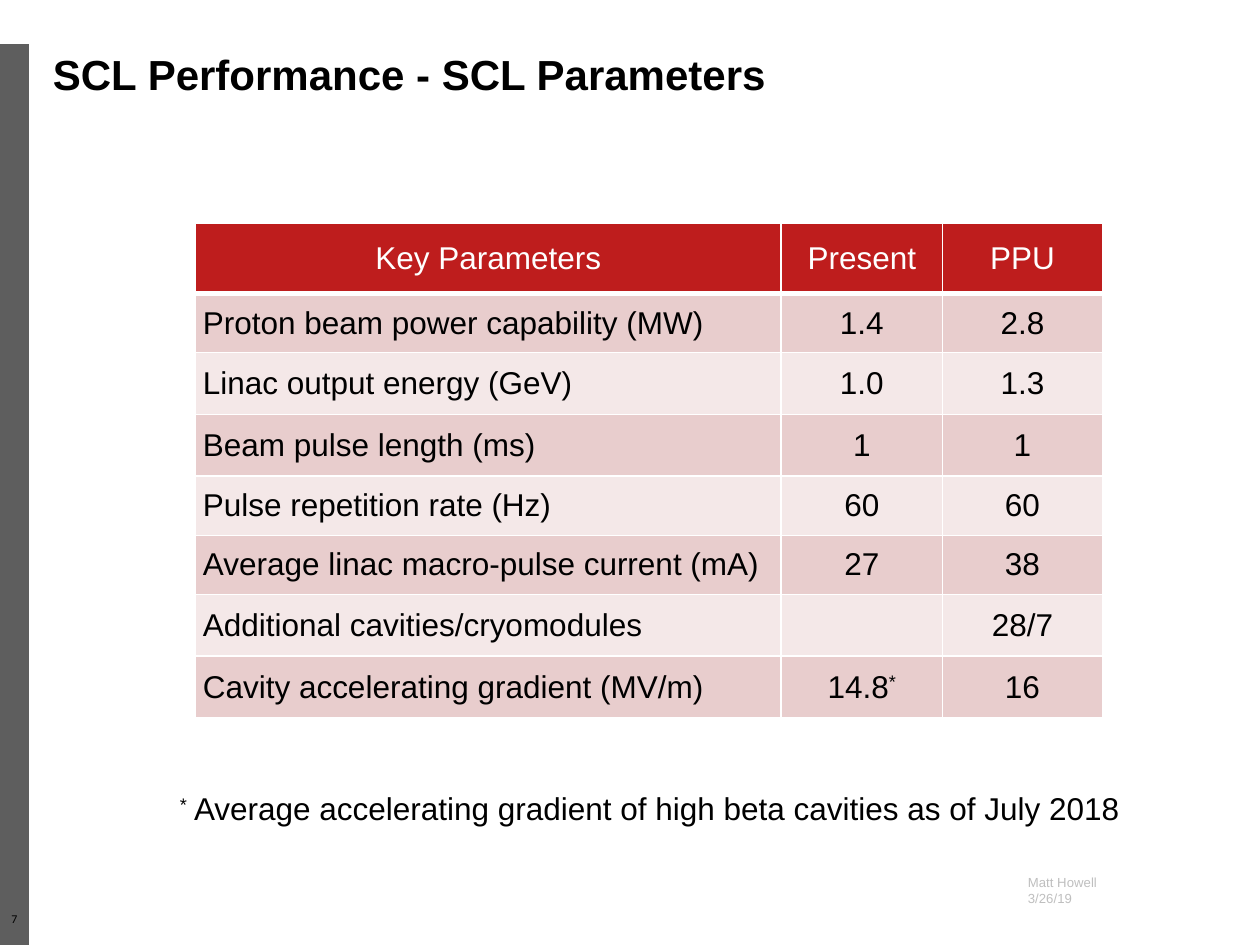
from dataclasses import dataclass

from lxml.etree import SubElement
from pptx import Presentation
from pptx.dml.color import RGBColor
from pptx.enum.shapes import MSO_SHAPE
from pptx.enum.text import MSO_ANCHOR as Anchor, MSO_AUTO_SIZE as AutoSize, PP_ALIGN as Align
from pptx.oxml.ns import qn
from pptx.util import Inches, Pt


@dataclass(frozen=True)
class Theme:
    font: str = "Arial"
    number_font: str = "Calibri"
    ink: str = "000000"
    paper: str = "FFFFFF"
    sidebar: str = "5E5E5E"
    credit: str = "BFBFBF"
    header: str = "BE1D1D"
    bands: tuple = ("E8CDCD", "F4E8E8")
    title_size: float = 24
    body_size: float = 18
    credit_size: float = 7.5
    number_size: float = 6.8
    border: float = 1
    header_border: float = 3


PARAMETERS = [
    ("Key Parameters", "Present", "PPU"),
    ("Proton beam power capability (MW)", "1.4", "2.8"),
    ("Linac output energy (GeV)", "1.0", "1.3"),
    ("Beam pulse length (ms)", "1", "1"),
    ("Pulse repetition rate (Hz)", "60", "60"),
    ("Average linac macro-pulse current (mA)", "27", "38"),
    ("Additional cavities/cryomodules", "", "28/7"),
    ("Cavity accelerating gradient (MV/m)", "14.8*", "16"),
]
COLUMN_WIDTHS = [4.65, 1.28, 1.27]
ROW_HEIGHTS = [0.56, 0.47, 0.49, 0.49, 0.47, 0.47, 0.49, 0.49]


def apply_format(target, values):
    for name, value in values.items():
        setattr(target, name, value)


class SlideBuilder:
    def __init__(self, slide, theme):
        self.slide = slide
        self.theme = theme

    def fill_paragraph(self, paragraph, text, size, color=None, font=None, bold=False, **layout):
        """Add the text as runs, raising an asterisk as a footnote mark."""
        apply_format(paragraph, layout)
        for part in filter(None, text.partition("*")):
            run = paragraph.add_run()
            run.text = part
            apply_format(run.font, {"name": font or self.theme.font, "size": Pt(size), "bold": bold})
            run.font.color.rgb = RGBColor.from_string(color or self.theme.ink)
            if part == "*":
                run._r.get_or_add_rPr().set("baseline", "30000")

    def bar(self, box, color):
        shape = self.slide.shapes.add_shape(MSO_SHAPE.RECTANGLE, *map(Inches, box))
        shape.shadow.inherit = False
        shape.fill.solid()
        shape.fill.fore_color.rgb = RGBColor.from_string(color)
        shape.line.fill.background()

    def title(self, box, text):
        shape = self.slide.shapes.title
        apply_format(shape, dict(zip(("left", "top", "width", "height"), map(Inches, box))))
        apply_format(shape.text_frame, {"vertical_anchor": Anchor.MIDDLE, "auto_size": AutoSize.NONE})
        self.fill_paragraph(shape.text_frame.paragraphs[0], text, self.theme.title_size, bold=True,
                            alignment=Align.LEFT, line_spacing=0.9)

    def text(self, box, lines, size, frame=None, **style):
        text_frame = self.slide.shapes.add_textbox(*map(Inches, box)).text_frame
        apply_format(text_frame, {"word_wrap": True, **(frame or {})})
        for index, line in enumerate(lines):
            paragraph = text_frame.add_paragraph() if index else text_frame.paragraphs[0]
            self.fill_paragraph(paragraph, line, size, **style)

    def borders(self, cell, bottom):
        properties = cell._tc.get_or_add_tcPr()
        widths = {"lnL": self.theme.border, "lnR": self.theme.border,
                  "lnT": self.theme.border, "lnB": bottom}
        for side, width in widths.items():
            line = SubElement(properties, qn(f"a:{side}"), w=str(Pt(width)))
            fill = SubElement(line, qn("a:solidFill"))
            SubElement(fill, qn("a:srgbClr"), val=self.theme.paper)

    def table(self, left, top, rows, widths, heights):
        theme = self.theme
        box = map(Inches, (left, top, sum(widths), sum(heights)))
        table = self.slide.shapes.add_table(len(rows), len(widths), *box).table
        for column, width in zip(table.columns, widths):
            column.width = Inches(width)
        for row, height in zip(table.rows, heights):
            row.height = Inches(height)
        cell_format = {"vertical_anchor": Anchor.MIDDLE, "margin_left": Inches(0.06),
                       "margin_right": Inches(0.06), "margin_top": 0, "margin_bottom": 0}
        for row_index, values in enumerate(rows):
            is_header = row_index == 0
            fill = theme.header if is_header else theme.bands[(row_index - 1) % 2]
            for column_index, value in enumerate(values):
                cell = table.cell(row_index, column_index)
                apply_format(cell, cell_format)
                self.borders(cell, theme.header_border if is_header else theme.border)
                cell.fill.solid()
                cell.fill.fore_color.rgb = RGBColor.from_string(fill)
                centred = is_header or column_index > 0
                self.fill_paragraph(cell.text_frame.paragraphs[0], value, theme.body_size,
                                    theme.paper if is_header else theme.ink,
                                    alignment=Align.CENTER if centred else Align.LEFT)


def main():
    presentation = Presentation()
    apply_format(presentation, {"slide_width": Inches(10), "slide_height": Inches(7.5)})
    theme = Theme()
    title_only = presentation.slide_layouts[5]
    builder = SlideBuilder(presentation.slides.add_slide(title_only), theme)

    no_margins = dict.fromkeys(("margin_left", "margin_right", "margin_top", "margin_bottom"), 0)
    builder.bar((0, 0.35, 0.23, 7.15), theme.sidebar)
    builder.text((0, 7.25, 0.23, 0.17), ["7"], theme.number_size, no_margins,
                 font=theme.number_font, alignment=Align.CENTER, line_spacing=0.9)
    builder.text((8.06, 6.89, 1.67, 0.35), ["Matt Howell", "3/26/19"], theme.credit_size,
                 color=theme.credit)
    builder.title((0.32, 0.39, 9.37, 0.44), "SCL Performance - SCL Parameters")
    builder.table(1.55, 1.77, PARAMETERS, COLUMN_WIDTHS, ROW_HEIGHTS)
    builder.text((1.33, 6.25, 7.74, 0.37),
                 ["* Average accelerating gradient of high beta cavities as of July 2018"],
                 theme.body_size, {"word_wrap": False}, line_spacing=0.9)
    presentation.save("out.pptx")


if __name__ == "__main__":
    main()
